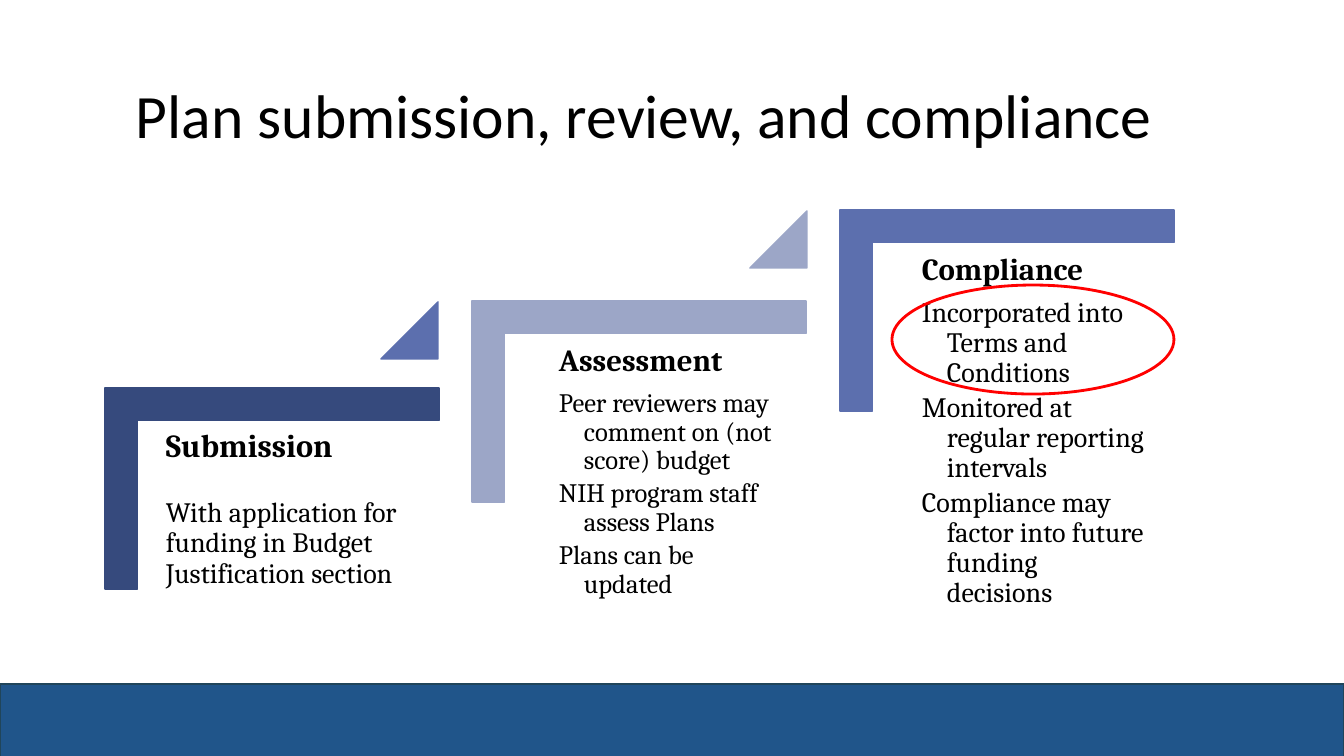
from pptx import Presentation
from pptx.dml.color import RGBColor
from pptx.enum.shapes import MSO_SHAPE
from pptx.enum.text import MSO_ANCHOR
from pptx.util import Pt

TRIANGLE = MSO_SHAPE.ISOSCELES_TRIANGLE
RECTANGLE = MSO_SHAPE.RECTANGLE
OVAL = MSO_SHAPE.OVAL
TOP, BOTTOM = MSO_ANCHOR.TOP, MSO_ANCHOR.BOTTOM

EMU_PER_PX = 914400 / 100.8
COLORS = {
    "text": "000000",
    "navy": "364A7D",
    "pale": "9CA6C7",
    "blue": "5C6FAE",
    "footer": "20558A",
    "footer_edge": "20455A",
    "highlight": "FF0000",
}
BRACKET_W, BRACKET_H = 334, 201
BRACKET_THICKNESS = 16100
MARKER_SIZE = 57
HANGING = 25

STAGES = [
    {"corner": (105, 388), "color": "navy", "text_box": (156, 420, 290, 264),
     "heading": "Submission", "sizes": (23, 20), "gaps": (24, 0), "hanging": 0,
     "points": ["With application for funding in Budget Justification section"],
     "marker": (381, 302), "marker_color": "blue"},
    {"corner": (472, 301), "color": "pale", "text_box": (549, 335, 240, 264),
     "heading": "Assessment", "sizes": (22, 19), "gaps": (8.1, 3), "hanging": HANGING,
     "points": ["Peer reviewers may comment on (not score) budget",
                "NIH program staff assess Plans",
                "Plans can be updated"],
     "marker": (750, 211), "marker_color": "pale"},
    {"corner": (840, 210), "color": "blue", "text_box": (912, 244, 245, 264),
     "heading": "Compliance", "sizes": (22, 20), "gaps": (7.7, 3), "hanging": HANGING,
     "points": ["Incorporated into Terms and Conditions",
                "Monitored at regular reporting intervals",
                "Compliance may factor into future funding decisions"],
     "marker": None, "marker_color": None},
]


def px(length):
    """Turn pixels into EMU."""
    return round(length * EMU_PER_PX)


def rgb(name):
    """Look up a named colour."""
    return RGBColor.from_string(COLORS[name])


def add_figure(slide, kind, box, fill, line, line_width):
    """Add a preset shape with an optional fill and an outline."""
    figure = slide.shapes.add_shape(kind, *map(px, box))
    figure.shadow.inherit = False
    if fill:
        figure.fill.solid()
        figure.fill.fore_color.rgb = rgb(fill)
    else:
        figure.fill.background()
    figure.line.color.rgb = rgb(line)
    figure.line.width = Pt(line_width)
    return figure


def add_bracket(slide, corner, color):
    """Add a corner preset turned so that its angle is at the top left."""
    left, top = corner
    shift = (BRACKET_W - BRACKET_H) / 2
    box = (left + shift, top - shift, BRACKET_H, BRACKET_W)
    bracket = add_figure(slide, RECTANGLE, box, color, color, 1.1)
    geometry = bracket._element.prstGeom
    geometry.set("prst", "corner")
    geometry.rewrite_guides([("adj1", BRACKET_THICKNESS), ("adj2", BRACKET_THICKNESS)])
    bracket.rotation = 90


def add_marker(slide, position, color):
    """Add the right triangle that leads up to the next stage."""
    box = (*position, MARKER_SIZE, MARKER_SIZE)
    marker = add_figure(slide, TRIANGLE, box, color, color, 1.1)
    marker.adjustments[0] = 1


def add_frame(slide, box, anchor, inset_y):
    """Add a wrapping text box and return its text frame."""
    frame = slide.shapes.add_textbox(*map(px, box)).text_frame
    frame.word_wrap = True
    frame.vertical_anchor = anchor
    frame.margin_left = frame.margin_right = px(10)
    frame.margin_top = frame.margin_bottom = px(inset_y)
    return frame


def write(paragraph, text, size, font, bold=False):
    """Fill a paragraph and format its runs."""
    paragraph.text = text
    paragraph.line_spacing = 0.9
    for run in paragraph.runs:
        run.font.size = Pt(size)
        run.font.name = font
        run.font.bold = bold
        run.font.color.rgb = rgb("text")


def add_stage_text(slide, stage):
    """Add a stage heading and its points."""
    frame = add_frame(slide, stage["text_box"], TOP, 10)
    heading_size, point_size = stage["sizes"]
    first_gap, next_gap = stage["gaps"]
    write(frame.paragraphs[0], stage["heading"], heading_size, "Cambria", True)
    for index, text in enumerate(stage["points"]):
        point = frame.add_paragraph()
        write(point, text, point_size, "Cambria")
        point.space_before = Pt(next_gap if index else first_gap)
        if stage["hanging"]:
            point.level = 1
            properties = point._p.get_or_add_pPr()
            properties.set("marL", str(px(stage["hanging"])))
            properties.set("indent", str(-px(stage["hanging"])))


def main():
    """Build the slide and save it."""
    deck = Presentation()
    deck.slide_width, deck.slide_height = px(1344), px(756)
    slide = deck.slides.add_slide(deck.slide_layouts[6])

    title = add_frame(slide, (126, 8, 1089, 149), BOTTOM, 5)
    write(title.paragraphs[0], "Plan submission, review, and compliance", 44, "Calibri")

    for stage in STAGES:
        add_bracket(slide, stage["corner"], stage["color"])
        add_stage_text(slide, stage)
        if stage["marker"]:
            add_marker(slide, stage["marker"], stage["marker_color"])

    add_figure(slide, RECTANGLE, (0, 684, 1344, 80), "footer", "footer_edge", 1.5)
    add_figure(slide, OVAL, (892, 285, 282, 109), None, "highlight", 2)
    deck.save("out.pptx")


if __name__ == "__main__":
    main()
